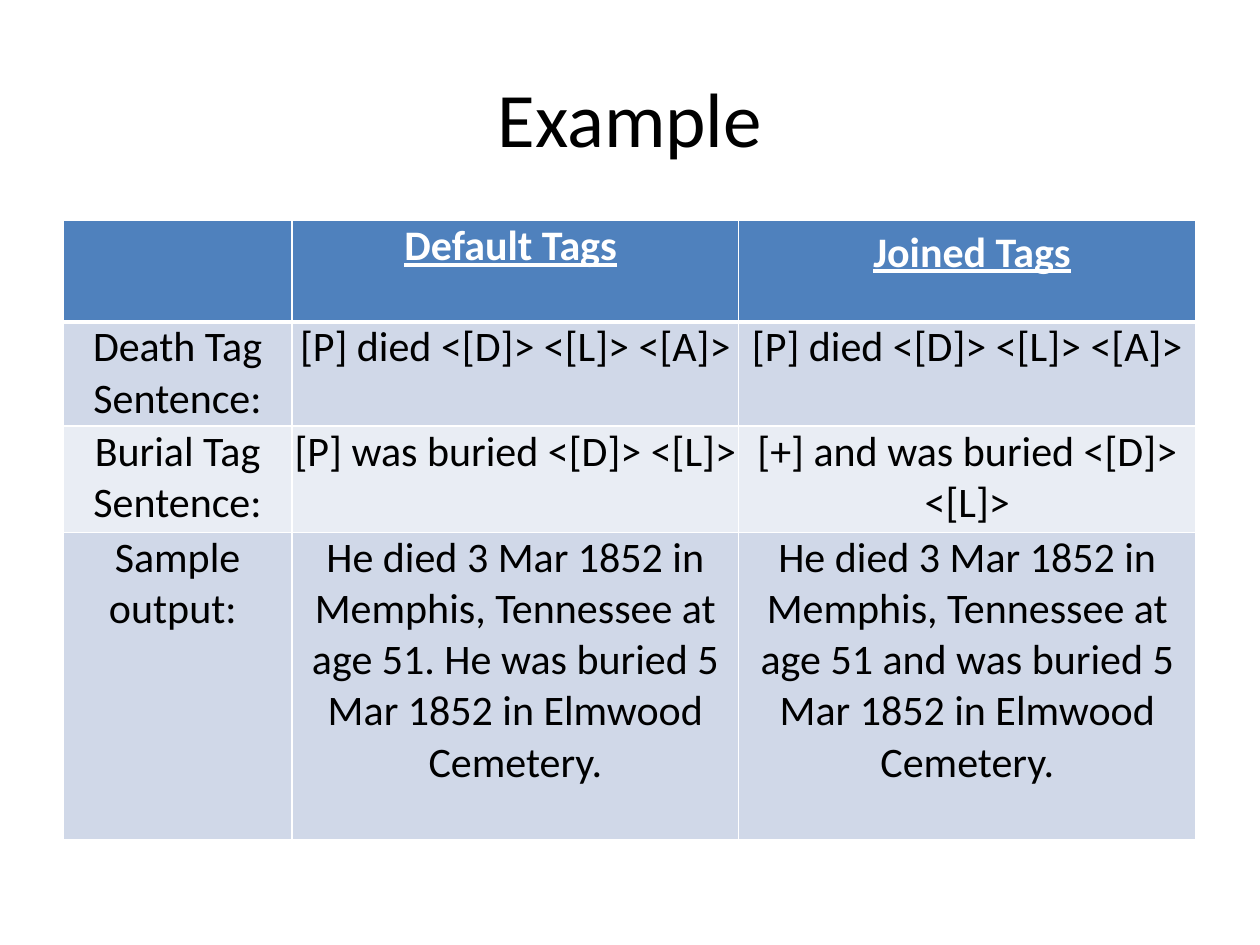
from typing import NamedTuple

from lxml import etree
from pptx import Presentation
from pptx import util as u
from pptx.dml.color import RGBColor
from pptx.enum import text
from pptx.oxml.ns import qn

BLACK = RGBColor(0x00, 0x00, 0x00)
WHITE = RGBColor(0xFF, 0xFF, 0xFF)
BLUE = RGBColor(0x4F, 0x81, 0xBD)
BAND_DARK = RGBColor(0xD0, 0xD8, 0xE8)
BAND_LIGHT = RGBColor(0xE9, 0xED, 0xF4)
FONT = "Calibri"


class Margins(NamedTuple):
    """Cell margins in centimetres."""
    left: float = 0
    top: float = 0
    right: float = 0
    bottom: float = 0


class TagRow(NamedTuple):
    height: float
    fill: RGBColor
    texts: tuple[str, str, str]


COLUMN_WIDTHS = (4.62, 9, 9.22)
HEADER_MARGINS = (Margins(), Margins(right=0.19), Margins(0.44, 0.13, 0.25, 0.13))
ROWS = (
    TagRow(2.04, BLUE, ("", "Default Tags", "Joined Tags")),
    TagRow(2.1, BAND_DARK, ("Death Tag Sentence:",
                            "[P] died <[D]> <[L]> <[A]>",
                            "[P] died <[D]> <[L]> <[A]>")),
    TagRow(2.14, BAND_LIGHT, ("Burial Tag Sentence:",
                              "[P] was buried <[D]> <[L]>",
                              "[+] and was buried <[D]> <[L]>")),
    TagRow(6.2, BAND_DARK, ("Sample output: ",
                            "He died 3 Mar 1852 in Memphis, Tennessee at age 51. "
                            "He was buried 5 Mar 1852 in Elmwood Cemetery.",
                            "He died 3 Mar 1852 in Memphis, Tennessee at age 51 "
                            "and was buried 5 Mar 1852 in Elmwood Cemetery.")),
)


def write(frame, content: str, size: float, color: RGBColor, heading: bool = False) -> None:
    """Fill a text frame with one centred paragraph."""
    frame.text = content
    para = frame.paragraphs[0]
    para.alignment = text.PP_ALIGN.CENTER
    for target in (para, *para.runs):
        font = target.font
        font.name, font.size = FONT, u.Pt(size)
        font.bold = font.underline = heading
        font.color.rgb = color


def add_borders(cell, top: float, bottom: float) -> None:
    """Draw white cell borders; widths are in points."""
    properties = cell._tc.get_or_add_tcPr()
    for side, width in (("L", 1), ("R", 1), ("T", top), ("B", bottom)):
        line = etree.SubElement(properties, qn(f"a:ln{side}"), w=str(u.Pt(width)))
        fill = etree.SubElement(line, qn("a:solidFill"))
        etree.SubElement(fill, qn("a:srgbClr"), val=str(WHITE))


def add_title(page, content: str) -> None:
    box = page.shapes.add_textbox(u.Cm(1.27), u.Cm(0.76), u.Cm(22.86), u.Cm(3.18))
    box.text_frame.word_wrap = True
    box.text_frame.vertical_anchor = text.MSO_ANCHOR.MIDDLE
    write(box.text_frame, content, 44, BLACK)


def add_tag_table(page) -> None:
    height = sum(row.height for row in ROWS)
    table = page.shapes.add_table(
        len(ROWS), len(COLUMN_WIDTHS), u.Cm(1.27), u.Cm(4.45),
        u.Cm(sum(COLUMN_WIDTHS)), u.Cm(height)).table
    for column, width in zip(table.columns, COLUMN_WIDTHS):
        column.width = u.Cm(width)
    for r, row in enumerate(ROWS):
        table.rows[r].height = u.Cm(row.height)
        header = r == 0
        for c, content in enumerate(row.texts):
            cell = table.cell(r, c)
            margins = HEADER_MARGINS[c] if header else Margins()
            cell.margin_left, cell.margin_top = u.Cm(margins.left), u.Cm(margins.top)
            cell.margin_right, cell.margin_bottom = u.Cm(margins.right), u.Cm(margins.bottom)
            cell.vertical_anchor = text.MSO_ANCHOR.TOP
            add_borders(cell, top=3 if r == 1 else 1, bottom=3 if header else 1)
            cell.fill.solid()
            cell.fill.fore_color.rgb = row.fill
            write(cell.text_frame, content, 24, WHITE if header else BLACK, header)


def main() -> None:
    deck = Presentation()
    deck.slide_width, deck.slide_height = u.Cm(25.4), u.Cm(19.05)
    page = deck.slides.add_slide(deck.slide_layouts[6])

    # Heading
    add_title(page, "Example")

    # Comparison of tag sentences
    add_tag_table(page)

    deck.save("out.pptx")


if __name__ == "__main__":
    main()
